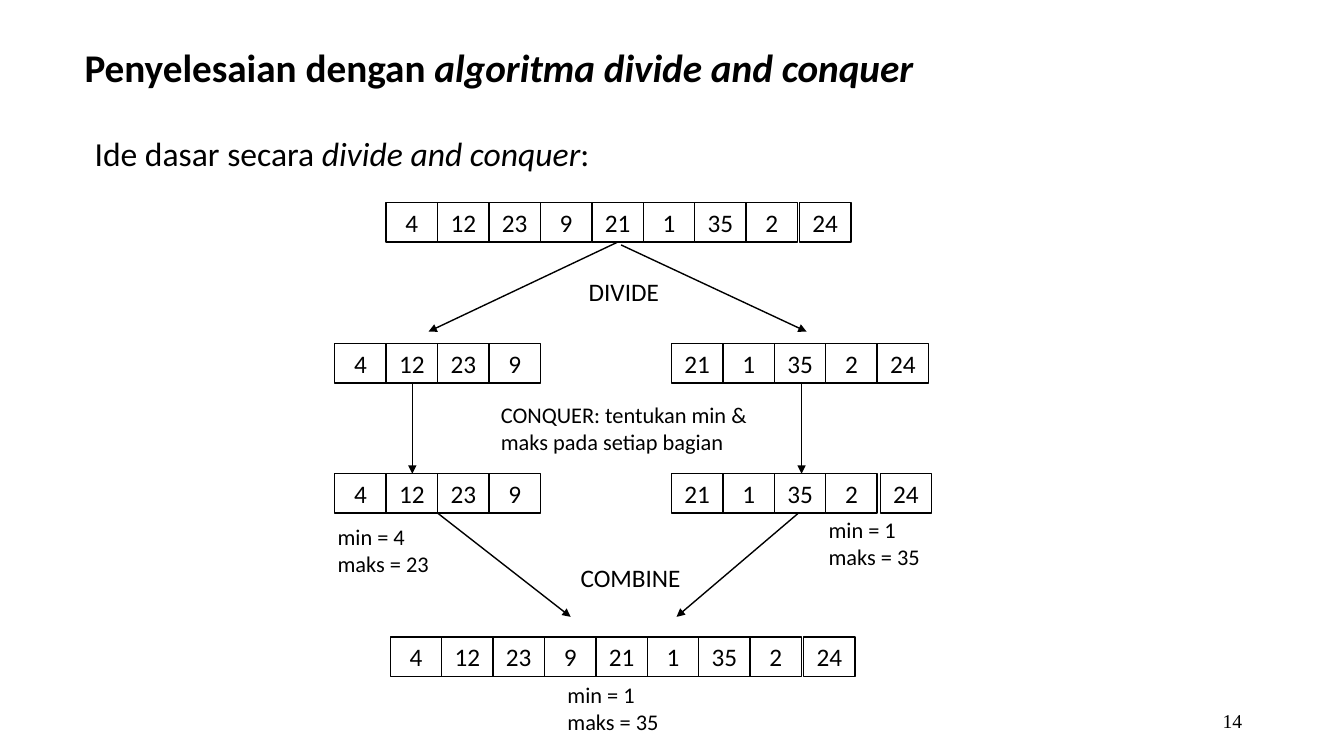
from lxml import etree
from pptx import Presentation
from pptx import util as u
from pptx.dml.color import RGBColor
from pptx.enum import shapes, text
from pptx.oxml.ns import qn

COLORS = {"ink": "000000", "paper": "FFFFFF"}
CELL_W, CELL_H = 0.51, 0.39
NUMBERS = [4, 12, 23, 9, 21, 1, 35, 2, 24]
LEFT_HALF, RIGHT_HALF = NUMBERS[:4], NUMBERS[4:]
SOLVED = "min = {}", "maks = {}"


def color(name):
    return RGBColor.from_string(COLORS[name])


def add_run(p, content, size, font="Calibri", bold=False, italic=False):
    r = p.add_run()
    r.text = content
    r.font.size = u.Pt(size)
    r.font.name = font
    r.font.bold = bold
    r.font.italic = italic
    r.font.color.rgb = color("ink")


def add_text(slide, box, paragraphs, size, font="Calibri", bold=False,
             wrap=False, middle=False, align=text.PP_ALIGN.LEFT):
    """Add a text box; each paragraph is a list of (text, italic) runs."""
    tf = slide.shapes.add_textbox(*map(u.Inches, box)).text_frame
    tf.word_wrap = wrap
    if not wrap:
        tf.auto_size = text.MSO_AUTO_SIZE.SHAPE_TO_FIT_TEXT
    if middle:
        tf.vertical_anchor = text.MSO_ANCHOR.MIDDLE
    for i, runs in enumerate(paragraphs):
        p = tf.add_paragraph() if i else tf.paragraphs[0]
        p.alignment = align
        for content, italic in runs:
            add_run(p, content, size, font, bold, italic)
    return tf


def add_label(slide, box, lines, size):
    add_text(slide, box, [[(line, False)] for line in lines], size)


def add_min_max(slide, left, top, low, high):
    lines = [line.format(n) for line, n in zip(SOLVED, (low, high))]
    add_label(slide, (left, top, 1.12, 0.64), lines, 16)


def add_cell(slide, left, top, number):
    sp = slide.shapes.add_shape(
        shapes.MSO_SHAPE.RECTANGLE,
        *map(u.Inches, (left, top, CELL_W, CELL_H)))
    sp.shadow.inherit = False
    sp.fill.background()
    sp.line.color.rgb = color("ink")
    sp.line.width = u.Pt(1)
    tf = sp.text_frame
    tf.margin_left = tf.margin_right = 0
    tf.vertical_anchor = text.MSO_ANCHOR.MIDDLE
    p = tf.paragraphs[0]
    p.alignment = text.PP_ALIGN.CENTER
    add_run(p, str(number), 18)


def add_array(slide, left, top, numbers, last_gap=0):
    """Draw a row of cells, with an optional gap before the last one."""
    last = len(numbers) - 1
    for i, number in enumerate(numbers):
        gap = last_gap if i == last else 0
        add_cell(slide, left + i * CELL_W + gap, top, number)


def add_arrow(slide, start, end):
    line = slide.shapes.add_connector(
        shapes.MSO_CONNECTOR.STRAIGHT, *map(u.Inches, start + end))
    line.line.color.rgb = color("ink")
    line.line.width = u.Pt(1)
    ln = line.line._get_or_add_ln()
    etree.SubElement(ln, qn("a:tailEnd"), type="triangle")
    etree.SubElement(line._element.spPr, qn("a:effectLst"))


def main():
    prs = Presentation()
    prs.slide_width, prs.slide_height = u.Inches(13.33), u.Inches(7.5)
    slide = prs.slides.add_slide(prs.slide_layouts[6])
    slide.background.fill.solid()
    slide.background.fill.fore_color.rgb = color("paper")

    add_text(slide, (9.42, 6.95, 3, 0.4), [[("14", False)]], 14,
             font="Times New Roman", wrap=True, middle=True,
             align=text.PP_ALIGN.RIGHT)
    add_text(slide, (0.84, 1.27, 5.2, 0.5),
             [[("Ide dasar secara ", False), ("divide and conquer", True),
               (":", False)]], 24)
    title = add_text(slide, (0.74, 0.4, 8.5, 0.58),
                     [[("Penyelesaian dengan ", False),
                       ("algoritma divide and conquer", True)]],
                     28, bold=True, wrap=True, middle=True)
    title.paragraphs[0].line_spacing = 0.9

    add_array(slide, 3.83, 2.01, NUMBERS, 0.02)
    for top, last_gap in ((3.41, 0), (4.7, 0.03)):
        add_array(slide, 3.32, top, LEFT_HALF)
        add_array(slide, 6.66, top, RIGHT_HALF, last_gap)
    add_array(slide, 3.87, 6.32, NUMBERS, 0.02)

    for start, end in (
        ((6.13, 2.4), (4.25, 3.29)), ((6.16, 2.43), (8, 3.29)),
        ((4.09, 3.8), (4.09, 4.7)), ((7.95, 3.8), (7.95, 4.7)),
        ((4.34, 5.09), (5.66, 6.12)), ((7.92, 5.09), (6.71, 6.12)),
    ):
        add_arrow(slide, start, end)

    add_label(slide, (5.74, 2.69, 0.91, 0.4), ["DIVIDE"], 18)
    add_label(slide, (5.66, 5.53, 1.2, 0.4), ["COMBINE"], 18)
    add_label(slide, (4.87, 3.93, 2.67, 0.64),
              ["CONQUER: tentukan min &", "maks pada setiap bagian"], 16)
    for left, top, numbers in ((3.25, 5.14, LEFT_HALF),
                               (8.12, 5.07, RIGHT_HALF),
                               (5.53, 6.71, NUMBERS)):
        add_min_max(slide, left, top, min(numbers), max(numbers))

    prs.save("out.pptx")


if __name__ == "__main__":
    main()
